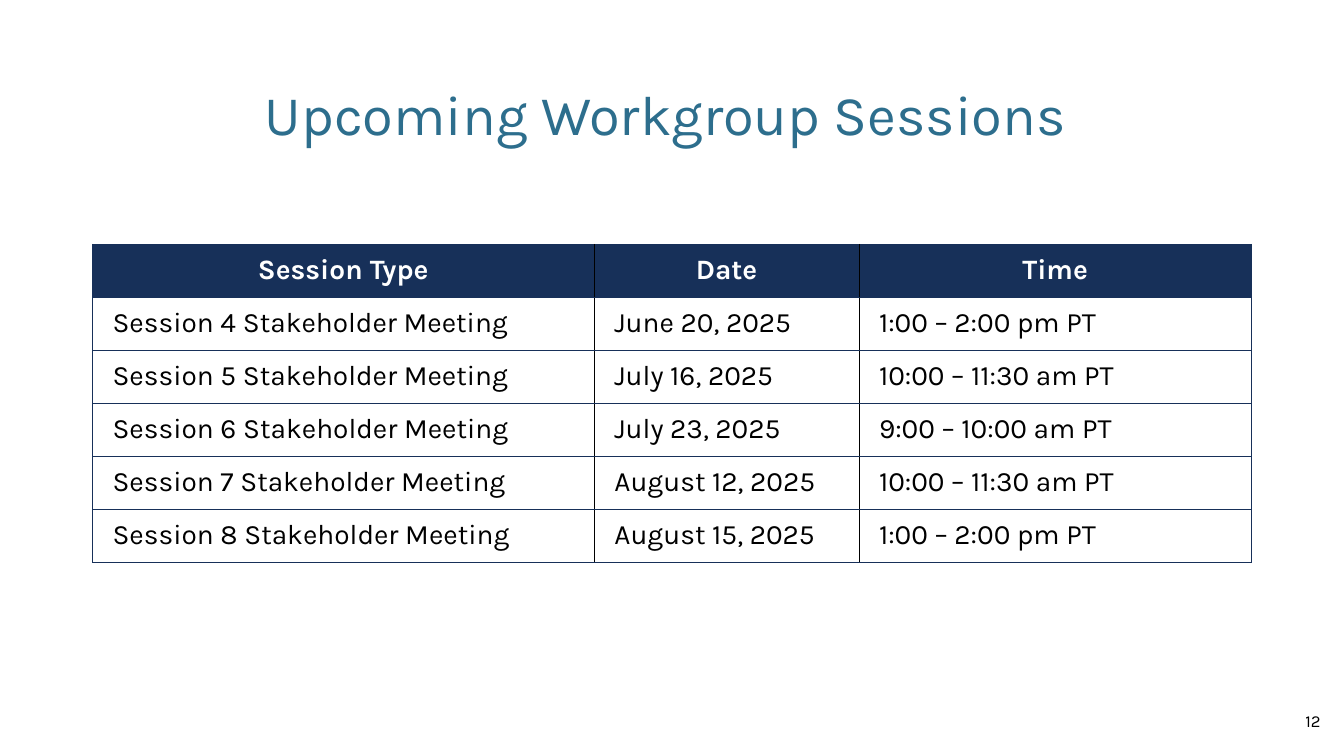
from lxml import etree
from pptx import Presentation
from pptx.dml.color import RGBColor
from pptx.enum.text import MSO_ANCHOR, PP_ALIGN
from pptx.oxml.ns import qn
from pptx.util import Pt

LEFT, CENTER, RIGHT = PP_ALIGN.LEFT, PP_ALIGN.CENTER, PP_ALIGN.RIGHT
MIDDLE = MSO_ANCHOR.MIDDLE
FONT = "Karla"
NAVY, TEAL, BLACK, WHITE = "173059", "2D6E8D", "000000", "FFFFFF"

TITLE = "Upcoming Workgroup Sessions "
PAGE = "12"
ROWS = [
    ("Session Type", "Date", "Time"),
    ("Session 4 Stakeholder Meeting", "June 20, 2025", "1:00 – 2:00 pm PT"),
    ("Session 5 Stakeholder Meeting", "July 16, 2025", "10:00 – 11:30 am PT"),
    ("Session 6 Stakeholder Meeting", "July 23, 2025", "9:00 – 10:00 am PT"),
    ("Session 7 Stakeholder Meeting", "August 12, 2025", "10:00 – 11:30 am PT"),
    ("Session 8 Stakeholder Meeting", "August 15, 2025", "1:00 – 2:00 pm PT"),
]
WIDTHS = [358.5, 189, 280.5]
ROW_H = 37.8
EDGE, WIDE = 66, sum(WIDTHS)


def color(code):
    return RGBColor.from_string(code)


def write(frame, text, size=20, ink=BLACK, bold=False, align=LEFT):
    frame.word_wrap = True
    para = frame.paragraphs[0]
    para.alignment = align
    run = para.add_run()
    run.text = text
    font = run.font
    font.name, font.size, font.bold = FONT, Pt(size), bold
    font.color.rgb = color(ink)


def border(cell, side, ink):
    props = cell._tc.get_or_add_tcPr()
    line = etree.SubElement(props, qn("a:ln" + side), w=str(Pt(0.5)))
    fill = etree.SubElement(line, qn("a:solidFill"))
    etree.SubElement(fill, qn("a:srgbClr"), val=ink)


def add_title(slide):
    title = slide.shapes.title
    title.left, title.top = Pt(EDGE), Pt(28.8)
    title.width, title.height = Pt(WIDE), Pt(104.4)
    title.text_frame.vertical_anchor = MIDDLE
    write(title.text_frame, TITLE, size=40, ink=TEAL, align=CENTER)


def add_sessions(slide):
    count, last = len(ROWS), len(WIDTHS) - 1
    table = slide.shapes.add_table(
        count, len(WIDTHS), Pt(EDGE), Pt(174.4), Pt(WIDE), Pt(ROW_H * count)
    ).table
    table.horz_banding = False
    for col, width in zip(table.columns, WIDTHS):
        col.width = Pt(width)
    for r, texts in enumerate(ROWS):
        table.rows[r].height = Pt(ROW_H)
        head = r == 0
        for c, text in enumerate(texts):
            cell = table.cell(r, c)
            cell.margin_left = cell.margin_right = Pt(14.4)
            cell.margin_top = cell.margin_bottom = Pt(7.2)
            border(cell, "L", NAVY if c == 0 else BLACK)
            border(cell, "R", NAVY if c == last else BLACK)
            border(cell, "T", NAVY)
            border(cell, "B", NAVY)
            if head:
                cell.fill.solid()
                cell.fill.fore_color.rgb = color(NAVY)
            else:
                cell.fill.background()
            write(cell.text_frame, text, bold=head,
                  ink=WHITE if head else BLACK, align=CENTER if head else LEFT)


def add_page(slide):
    box = slide.shapes.add_textbox(Pt(734.4), Pt(500.4), Pt(216), Pt(28.8))
    box.text_frame.vertical_anchor = MIDDLE
    write(box.text_frame, PAGE, size=12, align=RIGHT)


def main():
    deck = Presentation()
    deck.slide_width, deck.slide_height = Pt(960), Pt(540)
    slide = deck.slides.add_slide(deck.slide_layouts[5])
    add_title(slide)
    add_sessions(slide)
    add_page(slide)
    deck.save("out.pptx")


if __name__ == "__main__":
    main()
